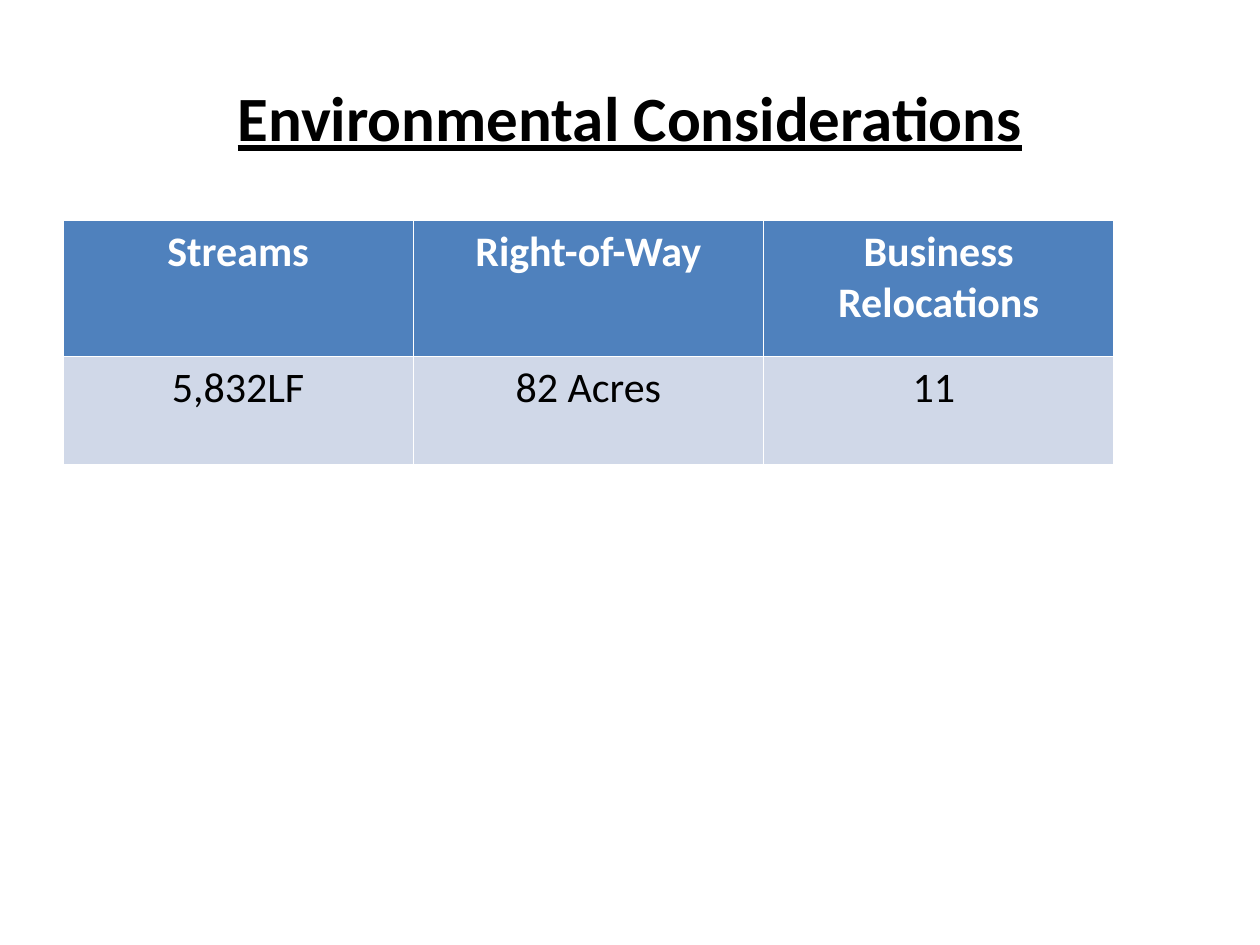
from dataclasses import dataclass

from pptx import Presentation
from pptx.dml.color import RGBColor
from pptx.enum.text import MSO_ANCHOR, PP_ALIGN
from pptx.util import Inches, Pt

CENTER = PP_ALIGN.CENTER
MIDDLE = MSO_ANCHOR.MIDDLE
TITLE_ONLY_LAYOUT = 5
FONT = "Calibri"
COLORS = {"black": "000000", "white": "FFFFFF", "header": "4F81BD", "body": "D0D8E8"}


@dataclass
class TableRow:
    texts: list[str]
    height: float
    fill: str
    color: str
    bold: bool


ROWS = [
    TableRow(["Streams", "Right-of-Way", "Business Relocations"], 1.08, "header", "white", True),
    TableRow(["5,832LF", "82 Acres", "11 "], 0.86, "body", "black", False),
]
COLUMN_WIDTH = 2.78


def rgb(name: str) -> RGBColor:
    return RGBColor.from_string(COLORS[name])


def write_centered(text_frame, text: str, size: int, color: str, bold: bool, underline: bool = False) -> None:
    text_frame.text = text
    paragraph = text_frame.paragraphs[0]
    paragraph.alignment = CENTER
    font = paragraph.runs[0].font
    font.name = FONT
    font.size = Pt(size)
    font.bold = bold
    font.underline = underline
    font.color.rgb = rgb(color)


def add_title(slide, text: str) -> None:
    title = slide.shapes.title
    title.left, title.top = Inches(0.5), Inches(0.3)
    title.width, title.height = Inches(9), Inches(1.25)
    write_centered(title.text_frame, text, 36, "black", True, underline=True)
    title.text_frame.vertical_anchor = MIDDLE


def add_impact_table(slide, rows: list[TableRow]) -> None:
    """The default table style supplies the white cell borders."""
    column_count = len(rows[0].texts)
    table = slide.shapes.add_table(
        len(rows), column_count, Inches(0.5), Inches(1.75),
        Inches(COLUMN_WIDTH * column_count), Inches(sum(row.height for row in rows)),
    ).table
    for column in table.columns:
        column.width = Inches(COLUMN_WIDTH)
    for row_index, row in enumerate(rows):
        table.rows[row_index].height = Inches(row.height)
        for column_index, text in enumerate(row.texts):
            cell = table.cell(row_index, column_index)
            cell.fill.solid()
            cell.fill.fore_color.rgb = rgb(row.fill)
            write_centered(cell.text_frame, text, 24, row.color, row.bold)


def main() -> None:
    presentation = Presentation()
    presentation.slide_width, presentation.slide_height = Inches(10), Inches(7.5)
    slide = presentation.slides.add_slide(presentation.slide_layouts[TITLE_ONLY_LAYOUT])
    add_title(slide, "Environmental Considerations")
    add_impact_table(slide, ROWS)
    presentation.save("out.pptx")


if __name__ == "__main__":
    main()
